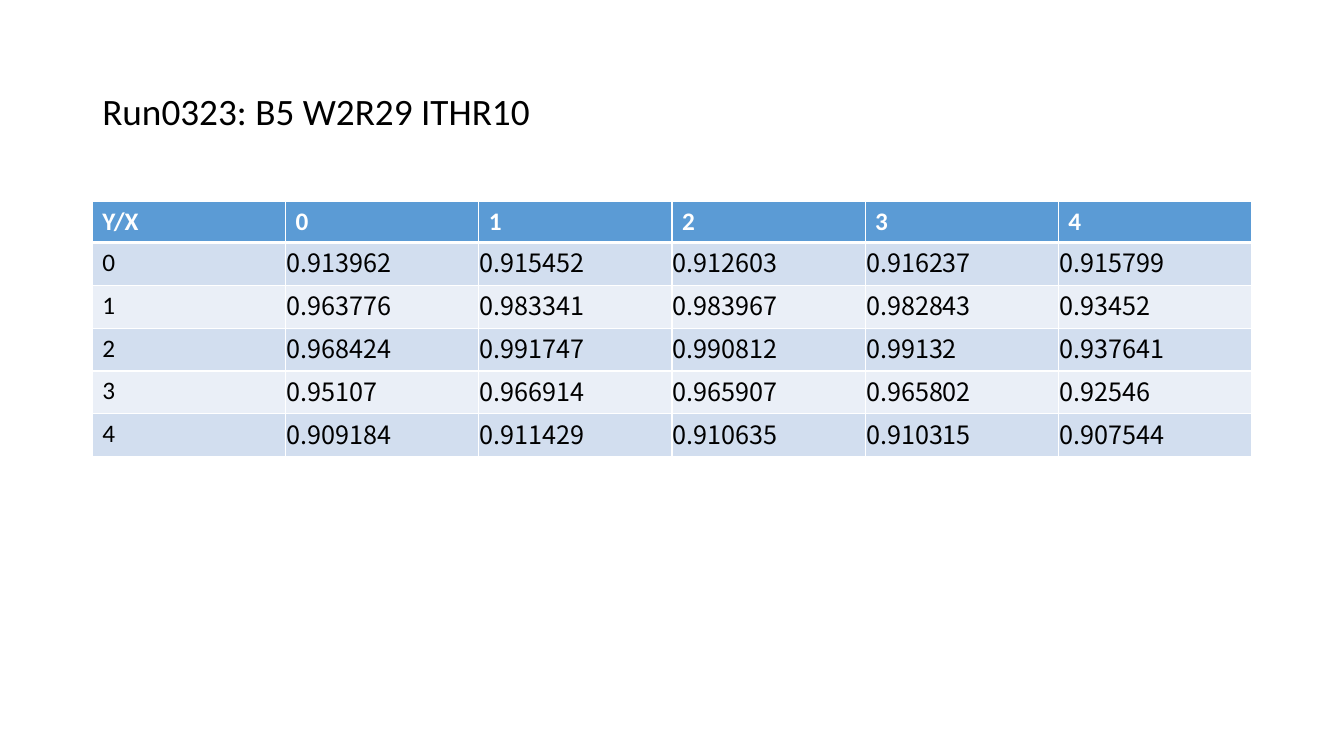
from dataclasses import dataclass

from lxml import etree
from pptx import Presentation
from pptx.dml.color import RGBColor
from pptx.enum.text import MSO_ANCHOR
from pptx.oxml.ns import qn
from pptx.util import Pt

MIDDLE, TOP = MSO_ANCHOR.MIDDLE, MSO_ANCHOR.TOP


@dataclass(frozen=True)
class Theme:
    text: str = "000000"
    light: str = "FFFFFF"
    header: str = "5B9BD5"
    bands: tuple = ("D2DEEF", "EAEFF7")
    label_font: str = "Calibri"
    value_font: str = "Noto Sans CJK SC"
    title_size: float = 26.6
    table_size: float = 18
    grid_width: float = 1
    header_rule: float = 3


THEME = Theme()
TITLE = "Run0323: B5 W2R29 ITHR10"
HEADINGS = ("Y/X", "0", "1", "2", "3", "4")
EFFICIENCIES = (
    ("0.913962", "0.915452", "0.912603", "0.916237", "0.915799"),
    ("0.963776", "0.983341", "0.983967", "0.982843", "0.93452"),
    ("0.968424", "0.991747", "0.990812", "0.99132", "0.937641"),
    ("0.95107", "0.966914", "0.965907", "0.965802", "0.92546"),
    ("0.909184", "0.911429", "0.910635", "0.910315", "0.907544"),
)
LEFT, WIDTH = 66, 828
TITLE_TOP, TITLE_HEIGHT = 28.75, 104.4
TABLE_TOP, HEADER_HEIGHT, BODY_HEIGHT = 144, 29.2, 30.6
LABEL_FORMAT = {
    "vertical_anchor": TOP,
    "margin_left": Pt(7.2), "margin_right": Pt(7.2),
    "margin_top": Pt(3.6), "margin_bottom": Pt(3.6),
}
VALUE_FORMAT = {
    "vertical_anchor": MIDDLE,
    "margin_left": Pt(0.75), "margin_right": Pt(0.75),
    "margin_top": Pt(0.75), "margin_bottom": Pt(3.6),
}


def apply_format(target, values):
    for attribute, value in values.items():
        setattr(target, attribute, value)


def write_text(frame, text, size, color, font=THEME.label_font, bold=False):
    run = frame.paragraphs[0].add_run()
    run.text = text
    apply_format(run.font, {"name": font, "size": Pt(size), "bold": bold})
    run.font.color.rgb = RGBColor.from_string(color)


def set_borders(cell, top, bottom):
    """Draw the four cell edges; call before the fill is set."""
    properties = cell._tc.get_or_add_tcPr()
    side = THEME.grid_width
    for tag, width in (("lnL", side), ("lnR", side), ("lnT", top), ("lnB", bottom)):
        line = etree.SubElement(properties, qn(f"a:{tag}"), w=str(Pt(width)))
        fill = etree.SubElement(line, qn("a:solidFill"))
        etree.SubElement(fill, qn("a:srgbClr"), val=THEME.light)


def style_cell(cell, layout, fill, top=THEME.grid_width, bottom=THEME.grid_width):
    apply_format(cell, layout)
    set_borders(cell, top, bottom)
    cell.fill.solid()
    cell.fill.fore_color.rgb = RGBColor.from_string(fill)


def add_title(slide):
    title = slide.shapes.add_textbox(
        Pt(LEFT), Pt(TITLE_TOP), Pt(WIDTH), Pt(TITLE_HEIGHT))
    frame = title.text_frame
    apply_format(frame, {"word_wrap": True, "vertical_anchor": MIDDLE})
    frame.paragraphs[0].line_spacing = 0.9
    write_text(frame, TITLE, THEME.title_size, THEME.text)


def fill_header(table):
    for column, heading in enumerate(HEADINGS):
        cell = table.cell(0, column)
        style_cell(cell, LABEL_FORMAT, THEME.header, bottom=THEME.header_rule)
        write_text(cell.text_frame, heading, THEME.table_size, THEME.light, bold=True)


def fill_body(table):
    for y, values in enumerate(EFFICIENCIES):
        band = THEME.bands[y % len(THEME.bands)]
        top = THEME.header_rule if y == 0 else THEME.grid_width
        for column, text in enumerate((str(y), *values)):
            is_label = column == 0
            cell = table.cell(y + 1, column)
            style_cell(cell, LABEL_FORMAT if is_label else VALUE_FORMAT, band, top=top)
            font = THEME.label_font if is_label else THEME.value_font
            write_text(cell.text_frame, text, THEME.table_size, THEME.text, font)


def add_efficiency_table(slide):
    body_rows = len(EFFICIENCIES)
    height = HEADER_HEIGHT + body_rows * BODY_HEIGHT
    table = slide.shapes.add_table(
        body_rows + 1, len(HEADINGS),
        Pt(LEFT), Pt(TABLE_TOP), Pt(WIDTH), Pt(height)).table
    for column in table.columns:
        column.width = Pt(WIDTH / len(HEADINGS))
    for index, row in enumerate(table.rows):
        row.height = Pt(BODY_HEIGHT if index else HEADER_HEIGHT)
    fill_header(table)
    fill_body(table)


def main():
    deck = Presentation()
    apply_format(deck, {"slide_width": Pt(960), "slide_height": Pt(540)})
    slide = deck.slides.add_slide(deck.slide_layouts[6])
    add_title(slide)
    add_efficiency_table(slide)
    deck.save("out.pptx")


if __name__ == "__main__":
    main()
